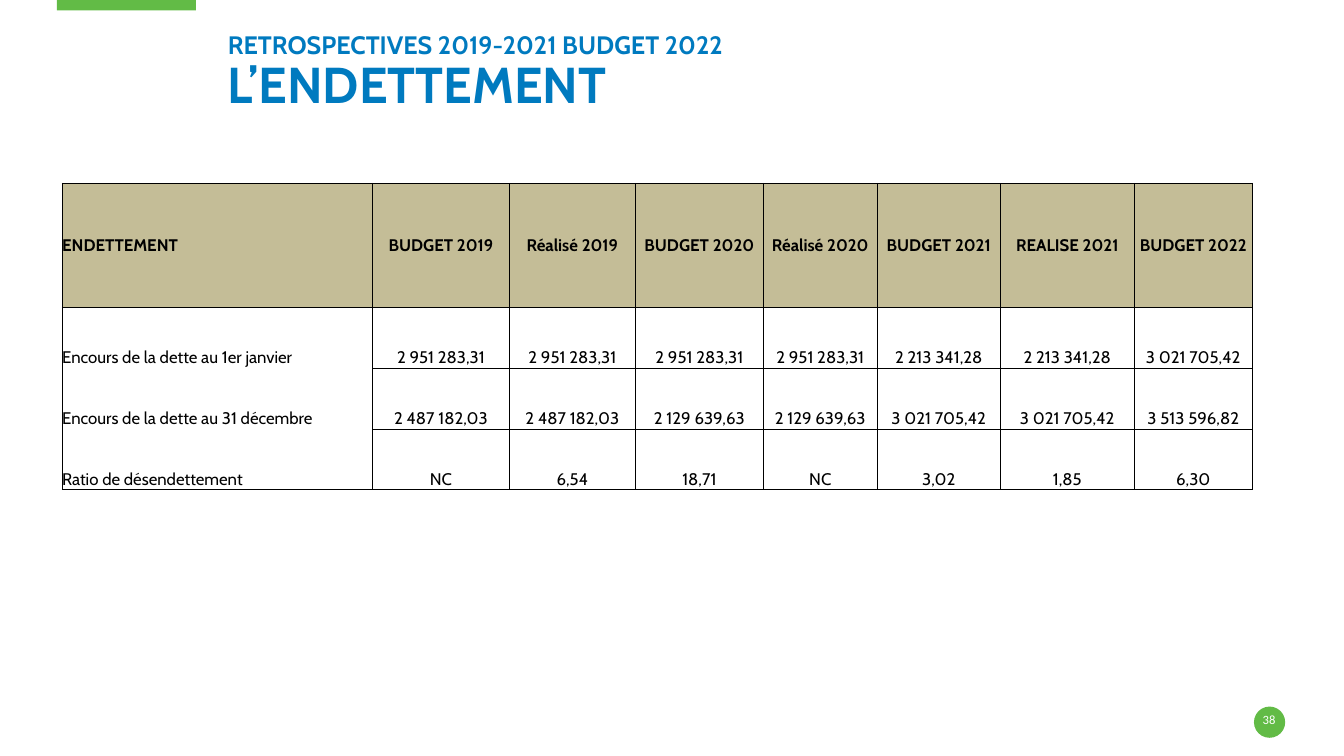
from dataclasses import dataclass

import pptx
import pptx.dml.color
import pptx.enum.shapes
import pptx.enum.text
import pptx.oxml
import pptx.oxml.ns
import pptx.util

Pt = pptx.util.Pt
RGBColor = pptx.dml.color.RGBColor
Align = pptx.enum.text.PP_ALIGN
Anchor = pptx.enum.text.MSO_ANCHOR
Preset = pptx.enum.shapes.MSO_SHAPE

GREEN = RGBColor(0x62, 0xBB, 0x46)
BLUE = RGBColor(0x00, 0x7A, 0xBF)
BEIGE = RGBColor(0xC4, 0xBD, 0x97)
BLACK = RGBColor(0x00, 0x00, 0x00)
WHITE = RGBColor(0xFF, 0xFF, 0xFF)

TABLE_LEFT, TABLE_TOP = 44.4, 130.8
COLUMN_WIDTHS = [221.7, 97.8, 90, 91.4, 81.4, 87.9, 95.7, 84.3]
ROW_HEIGHTS = [88.6, 43.5, 43.5, 43.5]
DEBT_ROWS = [
    ["ENDETTEMENT", "BUDGET 2019", "Réalisé 2019", "BUDGET 2020", "Réalisé 2020",
     "BUDGET 2021", "REALISE 2021", "BUDGET 2022"],
    ["Encours de la dette au 1er janvier", "2 951 283,31", "2 951 283,31", "2 951 283,31",
     "2 951 283,31", "2 213 341,28", "2 213 341,28", "3 021 705,42"],
    ["Encours de la dette au 31 décembre", "2 487 182,03", "2 487 182,03", "2 129 639,63",
     "2 129 639,63", "3 021 705,42", "3 021 705,42", "3 513 596,82"],
    ["Ratio de désendettement", "NC", "6,54", "18,71", "NC", "3,02", "1,85", "6,30"],
]


@dataclass
class Box:
    left: float
    top: float
    width: float
    height: float

    def lengths(self) -> list:
        return [Pt(value) for value in (self.left, self.top, self.width, self.height)]


@dataclass
class Ornament:
    preset: Preset
    box: Box


@dataclass
class TextRun:
    text: str
    size: float
    font: str
    color: RGBColor
    bold: bool = False


@dataclass
class Label:
    box: Box
    runs: list[TextRun]
    alignment: Align
    anchor: Anchor
    line_spacing: float = 1.0


ORNAMENTS = [
    Ornament(Preset.RECTANGLE, Box(40.6, -1.4, 99.4, 8.8)),
    Ornament(Preset.OVAL, Box(895.7, 504.7, 22.3, 22.3)),
]
LABELS = [
    Label(Box(162.7, 17.3, 783.4, 64.1),
          [TextRun("RETROSPECTIVES 2019-2021 BUDGET 2022", 18, "Cabin", BLUE, True),
           TextRun("L’ENDETTEMENT", 36, "Cabin", BLUE, True)],
          Align.LEFT, Anchor.BOTTOM, 0.9),
    Label(Box(895, 508.3, 23, 14.4), [TextRun("38", 9, "Calibri", WHITE)],
          Align.CENTER, Anchor.TOP),
]


def set_attributes(target, values: dict) -> None:
    for name, value in values.items():
        setattr(target, name, value)


def remove_margins(target) -> None:
    set_attributes(target, {f"margin_{side}": 0 for side in ("left", "top", "right", "bottom")})


def add_run(paragraph, text_run: TextRun) -> None:
    run = paragraph.add_run()
    run.text = text_run.text
    set_attributes(run.font, {"size": Pt(text_run.size), "name": text_run.font,
                              "bold": text_run.bold})
    run.font.color.rgb = text_run.color


def add_ornament(slide, ornament: Ornament) -> None:
    shape = slide.shapes.add_shape(ornament.preset, *ornament.box.lengths())
    shape.shadow.inherit = False
    shape.fill.solid()
    shape.fill.fore_color.rgb = GREEN
    shape.line.fill.background()


def add_label(slide, label: Label) -> None:
    """Add a text box with one line for each run."""
    frame = slide.shapes.add_textbox(*label.box.lengths()).text_frame
    remove_margins(frame)
    set_attributes(frame, {"word_wrap": True, "vertical_anchor": label.anchor})
    paragraph = frame.paragraphs[0]
    set_attributes(paragraph, {"alignment": label.alignment, "line_spacing": label.line_spacing})
    for index, text_run in enumerate(label.runs):
        if index:
            paragraph.add_line_break()
        add_run(paragraph, text_run)


def set_borders(cell, visible_sides: str) -> None:
    """Rule the sides named in visible_sides (L, R, T, B) and clear the others."""
    properties = cell._tc.get_or_add_tcPr()
    for index, side in enumerate("LRTB"):
        paint = (f'<a:solidFill><a:srgbClr val="{BLACK}"/></a:solidFill>'
                 if side in visible_sides else "<a:noFill/>")
        border = pptx.oxml.parse_xml(
            f'<a:ln{side} {pptx.oxml.ns.nsdecls("a")} w="{Pt(0.5)}">{paint}</a:ln{side}>')
        properties.insert(index, border)


def fill_cell(cell, text: str, row: int, column: int) -> None:
    is_header, is_row_name = row == 0, column == 0
    remove_margins(cell)
    cell.vertical_anchor = Anchor.MIDDLE if is_header else Anchor.BOTTOM
    if is_header:
        cell.fill.solid()
        cell.fill.fore_color.rgb = BEIGE
    else:
        cell.fill.background()
    paragraph = cell.text_frame.paragraphs[0]
    paragraph.alignment = Align.LEFT if is_row_name else Align.CENTER
    add_run(paragraph, TextRun(text, 12, "Cabin", BLACK, is_header))
    sides = "LRTB"
    if is_row_name and not is_header:
        sides = "LR" + ("T" if row == 1 else "") + ("B" if row == len(DEBT_ROWS) - 1 else "")
    set_borders(cell, sides)


def add_debt_table(slide) -> None:
    box = Box(TABLE_LEFT, TABLE_TOP, sum(COLUMN_WIDTHS), sum(ROW_HEIGHTS))
    table = slide.shapes.add_table(len(ROW_HEIGHTS), len(COLUMN_WIDTHS), *box.lengths()).table
    set_attributes(table, {"first_row": False, "horz_banding": False})
    for column, width in zip(table.columns, COLUMN_WIDTHS):
        column.width = Pt(width)
    for row, height in zip(table.rows, ROW_HEIGHTS):
        row.height = Pt(height)
    for row_index, texts in enumerate(DEBT_ROWS):
        for column_index, text in enumerate(texts):
            fill_cell(table.cell(row_index, column_index), text, row_index, column_index)


def main() -> None:
    presentation = pptx.Presentation()
    set_attributes(presentation, {"slide_width": Pt(960), "slide_height": Pt(540)})
    slide = presentation.slides.add_slide(presentation.slide_layouts[6])
    for ornament in ORNAMENTS:
        add_ornament(slide, ornament)
    for label in LABELS:
        add_label(slide, label)
    add_debt_table(slide)
    presentation.save("out.pptx")


if __name__ == "__main__":
    main()
